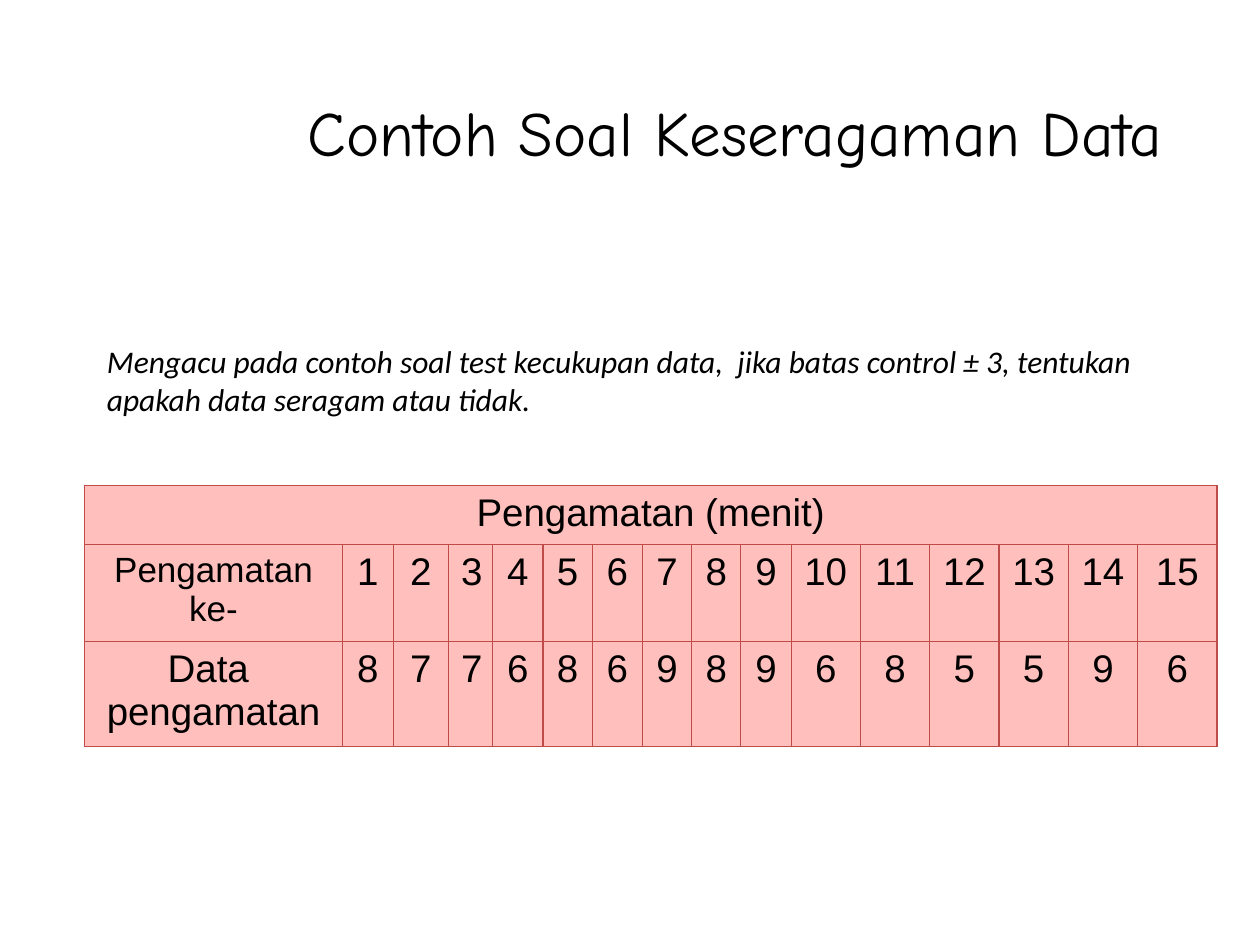
from lxml import etree
from pptx import Presentation
from pptx import util as u
from pptx.dml.color import RGBColor
from pptx.enum import text
from pptx.oxml import ns


def color(hex_value):
    return RGBColor.from_string(hex_value)


class SlideBuilder:
    INK = "000000"
    CELL_FILL = "FFBFBD"
    BORDER = "BF4C48"
    BORDER_WIDTH = u.Pt(0.75)

    def __init__(self, slide):
        self.slide = slide

    def style(self, paragraph, font, size, align, italic=False):
        paragraph.alignment = align
        paragraph.font.name = font
        paragraph.font.size = u.Pt(size)
        paragraph.font.italic = italic
        paragraph.font.color.rgb = color(self.INK)

    def textbox(self, box, wording, font, size, align, italic=False, grow=False):
        frame = self.slide.shapes.add_textbox(*map(u.Inches, box)).text_frame
        frame.word_wrap = True
        frame.vertical_anchor = text.MSO_ANCHOR.MIDDLE
        if grow:
            frame.auto_size = text.MSO_AUTO_SIZE.SHAPE_TO_FIT_TEXT
        frame.text = wording
        self.style(frame.paragraphs[0], font, size, align, italic)

    def cell(self, cell, wording, size):
        cell.text = wording
        self.style(cell.text_frame.paragraphs[0], "Arial", size, text.PP_ALIGN.CENTER)
        # Borders come before the fill in the cell properties
        properties = cell._tc.get_or_add_tcPr()
        for side in ("a:lnL", "a:lnR", "a:lnT", "a:lnB"):
            line = etree.SubElement(properties, ns.qn(side), w=str(self.BORDER_WIDTH))
            solid = etree.SubElement(line, ns.qn("a:solidFill"))
            etree.SubElement(solid, ns.qn("a:srgbClr"), val=self.BORDER)
        cell.fill.solid()
        cell.fill.fore_color.rgb = color(self.CELL_FILL)

    def table(self, box, widths, heights, rows, size, special_sizes):
        table = self.slide.shapes.add_table(
            len(heights), len(widths), *map(u.Inches, box)).table
        for column, width in zip(table.columns, widths):
            column.width = u.Inches(width)
        for row, height in zip(table.rows, heights):
            row.height = u.Inches(height)
        for r, row in enumerate(rows):
            for c, wording in enumerate(row):
                self.cell(table.cell(r, c), str(wording), special_sizes.get((r, c), size))
        table.cell(0, 0).merge(table.cell(0, len(widths) - 1))


def main():
    deck = Presentation()
    deck.slide_width, deck.slide_height = u.Inches(10), u.Inches(7.5)
    builder = SlideBuilder(deck.slides.add_slide(deck.slide_layouts[6]))

    # Title
    builder.textbox((1.67, 0.42, 8.33, 1.25), "Contoh Soal Keseragaman Data",
                    "Comic Neue", 36, text.PP_ALIGN.CENTER)

    # Question
    builder.textbox((0.75, 2.66, 8.83, 0.71),
                    "Mengacu pada contoh soal test kecukupan data,  jika batas control ± 3, "
                    "tentukan apakah data seragam atau tidak.",
                    "Calibri", 18, text.PP_ALIGN.LEFT, italic=True, grow=True)

    # Observations in minutes
    observations = [8, 7, 7, 6, 8, 6, 9, 8, 9, 6, 8, 5, 5, 9, 6]
    numbers = range(1, len(observations) + 1)
    widths = [2.05, 0.4, 0.44, 0.35, 0.4, 0.39, 0.4, 0.39, 0.39, 0.4] + [0.55] * 5 + [0.63]
    rows = [
        ["Pengamatan (menit)"] + [""] * len(observations),
        ["Pengamatan ke-", *numbers],
        ["Data  pengamatan", *observations],
    ]
    builder.table((0.67, 3.85, 9, 2.07), widths, [0.47, 0.77, 0.83], rows,
                  size=22, special_sizes={(1, 0): 20})

    deck.save("out.pptx")


if __name__ == "__main__":
    main()
